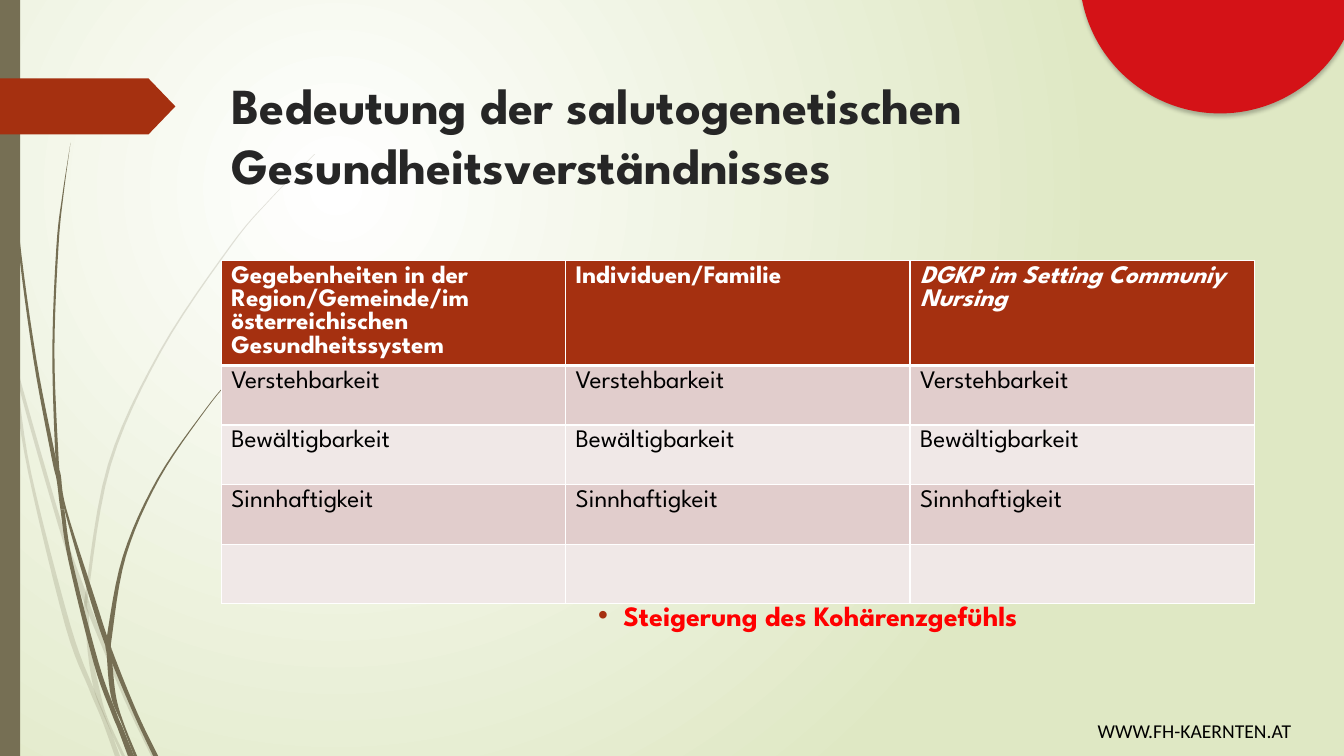
from pptx import Presentation
from pptx.dml.color import RGBColor
from pptx.enum import shapes, text
from pptx.oxml import ns, parse_xml
from pptx.util import Pt

HEADING_FONT = "League Spartan"
FOOTER_FONT = "Calibri"
WHITE = RGBColor(0xFF, 0xFF, 0xFF)
BLACK = RGBColor(0, 0, 0)
PALE_GREEN = RGBColor(0xDF, 0xE8, 0xC4)
OLIVE = RGBColor(0x76, 0x6F, 0x54)
RUST = RGBColor(0xA5, 0x30, 0x10)
RED = RGBColor(0xD4, 0x12, 0x17)
BRIGHT_RED = RGBColor(0xFF, 0, 0)
DARK_GREY = RGBColor(0x26, 0x26, 0x26)
BAND_DARK = RGBColor(0xE1, 0xCD, 0xCC)
BAND_LIGHT = RGBColor(0xF0, 0xE8, 0xE7)

# Grass blades: heights of the joints, then (y, left edge, right edge), in points
FAINT_BLADES = [
    ((252, 514), [
        (203, 0, 0), (215, 0, 2.6), (252, 8, 8.5), (271, 9.6, 12.2), (338, 20.2, 22.3),
        (447, 46.6, 50.4), (492, 63.5, 67), (514, 72.7, 76), (540, 82, 85.7)]),
    ((430,), [
        (248, 10, 10), (271, 12.2, 14.5), (375, 41.5, 44.5), (422, 57, 61), (430, 60, 63.8),
        (439, 63.4, 67), (499, 88.5, 91.5), (540, 108, 111.6)]),
    ((422, 439, 512), [
        (110, 224.6, 225), (142, 193, 193.6), (176, 164, 165), (251, 113.8, 115.2),
        (332, 77, 79.2), (422, 61.2, 63.4), (439, 61, 63.4), (465, 62.6, 65.5),
        (492, 67, 71), (512, 74.5, 76.5), (540, 87, 89.3)]),
]
SOLID_BLADES = [
    ((343, 364, 520), [
        (0, 2.2, 2.9), (35, 2.9, 3.6), (79, 5, 5.8), (168, 12.2, 13.7),
        (256, 23.8, 25.9), (326, 36.7, 39.6), (343, 40.5, 42.8), (364, 43.2, 46),
        (401, 49, 51.8), (474, 67, 70.6), (510, 79.9, 83.5), (520, 84, 87.8),
        (540, 91.4, 95.8)]),
    ((340, 464), [
        (102, 50.4, 50.4), (139, 44.6, 45.4), (176, 40.3, 41.8), (251, 37.4, 38.9),
        (326, 39.6, 41.8), (340, 42, 43.5), (364, 46, 47.5), (425, 63.4, 67),
        (464, 76.3, 79.9), (509, 95, 98), (540, 109.4, 113)]),
    ((455, 468, 517), [
        (248, 187.2, 187.9), (269, 166.3, 167), (292, 146.9, 147.6), (342, 112.3, 113.8),
        (397, 87.8, 90), (455, 76.3, 79.9), (468, 76.3, 79.9), (497, 79.2, 82.8),
        (517, 87, 88.6), (540, 95.8, 98)]),
]

TABLE_ROWS = [
    ["Gegebenheiten in der Region/Gemeinde/im österreichischen Gesundheitssystem",
     "Individuen/Familie", "DGKP im Setting Communiy Nursing"],
    ["Verstehbarkeit"] * 3,
    ["Bewältigbarkeit"] * 3,
    ["Sinnhaftigkeit"] * 3,
    [""] * 3,
]


def format_paragraph(paragraph, font_name, size, color, bold=False, italic=False):
    for run in paragraph.runs:
        font = run.font
        font.name, font.size = font_name, Pt(size)
        font.bold, font.italic = bold, italic
        font.color.rgb = color


def place(shape, left, top, width, height):
    shape.left, shape.top = Pt(left), Pt(top)
    shape.width, shape.height = Pt(width), Pt(height)


def paint(shape, color):
    shape.shadow.inherit = False
    shape.fill.solid()
    shape.fill.fore_color.rgb = color
    shape.line.fill.background()


def add_plain_shape(slide, kind, left, top, width, height, color):
    shape = slide.shapes.add_shape(kind, Pt(left), Pt(top), Pt(width), Pt(height))
    paint(shape, color)
    return shape


def set_background(slide):
    fill = slide.background.fill
    fill.gradient()
    for stop, color in zip(fill.gradient_stops, (WHITE, PALE_GREEN)):
        stop.color.rgb = color
    gradient = slide._element.find(".//" + ns.qn("a:gradFill"))
    gradient.remove(gradient.find(ns.qn("a:lin")))
    gradient.append(parse_xml(
        f'<a:path {ns.nsdecls("a")} path="circle">'
        '<a:fillToRect l="50000" t="50000" r="100000" b="100000"/></a:path>'))


def smooth(blade, steps=6):
    """Catmull-Rom curve through the stations of a blade."""
    padded = [blade[0], *blade, blade[-1]]
    stations = []
    for a, b, c, d in zip(padded, padded[1:], padded[2:], padded[3:]):
        for step in range(steps):
            t = step / steps
            stations.append([
                q + t / 2 * (r - p + t * (2 * p - 5 * q + 4 * r - s + t * (3 * (q - r) + s - p)))
                for p, q, r, s in zip(a, b, c, d)])
    return stations + [blade[-1]]


def add_blade(slide, joints, blade, opacity=100):
    stations = smooth(blade)
    limits = [blade[0][0], *joints, blade[-1][0]]
    for top, bottom in zip(limits, limits[1:]):
        section = [station for station in stations if top <= station[0] <= bottom]
        outline = [(Pt(left), Pt(y)) for y, left, right in section]
        outline += [(Pt(right), Pt(y)) for y, left, right in reversed(section)]
        builder = slide.shapes.build_freeform(*outline[0])
        builder.add_line_segments(outline[1:], close=True)
        shape = builder.convert_to_shape()
        paint(shape, OLIVE)
        if opacity < 100:
            color = shape._element.spPr.find(".//" + ns.qn("a:srgbClr"))
            color.append(parse_xml(f'<a:alpha {ns.nsdecls("a")} val="{opacity * 1000}"/>'))


def add_red_circle(slide):
    circle = add_plain_shape(slide, shapes.MSO_SHAPE.OVAL, 771, -120, 201, 201, RED)
    circle._element.spPr.find(ns.qn("a:effectLst")).append(parse_xml(
        f'<a:outerShdw {ns.nsdecls("a")} blurRad="{Pt(3)}" dist="{Pt(2)}" dir="5400000">'
        '<a:srgbClr val="000000"><a:alpha val="25000"/></a:srgbClr></a:outerShdw>'))


def add_footer(slide):
    box = slide.shapes.add_textbox(Pt(777), Pt(510), Pt(202), Pt(38))
    box.text_frame.word_wrap = True
    box.text_frame.text = "WWW.FH-KAERNTEN.AT"
    format_paragraph(box.text_frame.paragraphs[0], FOOTER_FONT, 14, BLACK)


def fill_title(slide):
    title = slide.shapes.title
    slide.shapes._spTree.append(title._element)
    place(title, 158.4, 49, 748, 101)
    frame = title.text_frame
    frame.text = "Bedeutung der salutogenetischen Gesundheitsverständnisses"
    frame.auto_size = text.MSO_AUTO_SIZE.NONE
    frame.vertical_anchor = text.MSO_ANCHOR.TOP
    paragraph = frame.paragraphs[0]
    paragraph.alignment = text.PP_ALIGN.LEFT
    format_paragraph(paragraph, HEADING_FONT, 36, DARK_GREY, bold=True)


def set_borders(cell, bottom_width):
    properties = cell._tc.get_or_add_tcPr()
    widths = {"lnL": 1, "lnR": 1, "lnT": 1, "lnB": bottom_width}
    for index, (side, width) in enumerate(widths.items()):
        properties.insert(index, parse_xml(
            f'<a:{side} {ns.nsdecls("a")} w="{Pt(width)}"><a:solidFill>'
            f'<a:srgbClr val="{WHITE}"/></a:solidFill></a:{side}>'))


def add_comparison_table(slide):
    frame = slide.shapes.add_table(len(TABLE_ROWS), 3, Pt(158), Pt(186.3), Pt(738), Pt(245))
    table = frame.table
    for row_index, labels in enumerate(TABLE_ROWS):
        header = row_index == 0
        table.rows[row_index].height = Pt(74.7 if header else 42.6)
        band = RUST if header else BAND_DARK if row_index % 2 else BAND_LIGHT
        for column_index, label in enumerate(labels):
            cell = table.cell(row_index, column_index)
            cell.text_frame.text = label
            cell.fill.solid()
            cell.fill.fore_color.rgb = band
            set_borders(cell, 3 if header else 1)
            format_paragraph(cell.text_frame.paragraphs[0], HEADING_FONT, 18,
                             WHITE if header else BLACK, bold=header,
                             italic=header and column_index == 2)


def fill_body(slide):
    body = slide.placeholders[1]
    slide.shapes._spTree.append(body._element)
    place(body, 204, 390, 702, 76)
    frame = body.text_frame
    frame.text = "Steigerung des Kohärenzgefühls"
    frame.auto_size = text.MSO_AUTO_SIZE.NONE
    frame.vertical_anchor = text.MSO_ANCHOR.BOTTOM
    frame.margin_bottom = Pt(14.5)
    paragraph = frame.paragraphs[0]
    properties = paragraph._p.get_or_add_pPr()
    properties.set("marL", str(Pt(234)))
    properties.set("indent", str(Pt(-18)))
    for bullet in (f'<a:buClr {ns.nsdecls("a")}><a:srgbClr val="{RUST}"/></a:buClr>',
                   f'<a:buFont {ns.nsdecls("a")} typeface="Arial"/>',
                   f'<a:buChar {ns.nsdecls("a")} char="•"/>'):
        properties.append(parse_xml(bullet))
    paragraph.space_before = Pt(0)
    format_paragraph(paragraph, HEADING_FONT, 20, BRIGHT_RED, bold=True)


def main():
    presentation = Presentation()
    presentation.slide_width, presentation.slide_height = Pt(960), Pt(540)
    slide = presentation.slides.add_slide(presentation.slide_layouts[1])
    # Background and decoration
    set_background(slide)
    for blades, opacity in ((FAINT_BLADES, 20), (SOLID_BLADES, 100)):
        for joints, blade in blades:
            add_blade(slide, joints, blade, opacity)
    add_plain_shape(slide, shapes.MSO_SHAPE.RECTANGLE, 0, 0, 14.4, 540, OLIVE)
    arrow = add_plain_shape(slide, shapes.MSO_SHAPE.PENTAGON, 0, 56, 125.3, 40, RUST)
    arrow.adjustments[0] = 0.48
    add_red_circle(slide)
    add_footer(slide)
    # Content
    fill_title(slide)
    add_comparison_table(slide)
    fill_body(slide)
    presentation.save("out.pptx")


if __name__ == "__main__":
    main()
